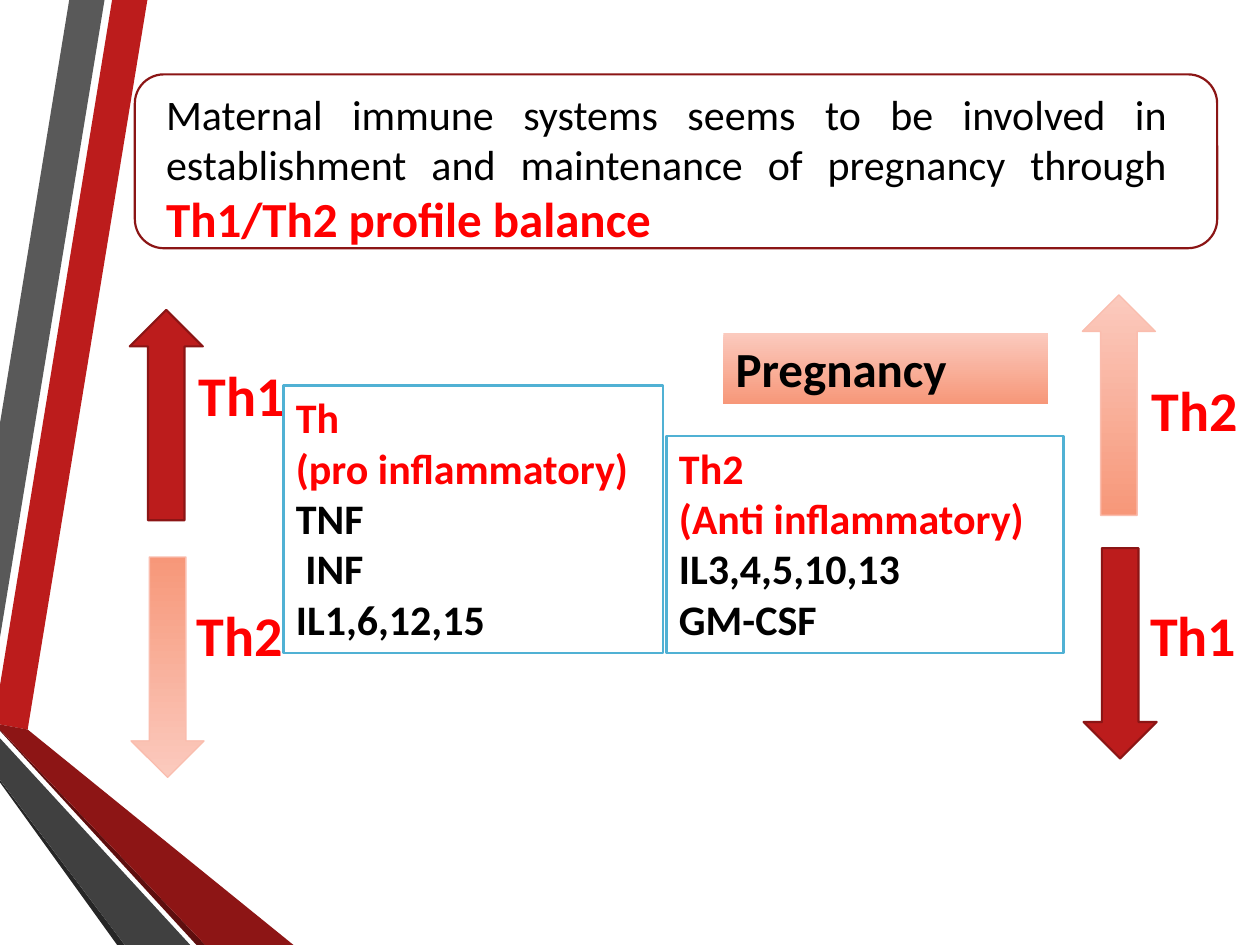
from pptx import Presentation
from pptx.dml.color import RGBColor
from pptx.enum.shapes import MSO_SHAPE
from pptx.enum.text import MSO_ANCHOR, PP_ALIGN
from pptx.util import Inches, Pt

RECT, ROUND, UP = MSO_SHAPE.RECTANGLE, MSO_SHAPE.ROUNDED_RECTANGLE, MSO_SHAPE.UP_ARROW
LEFT, JUSTIFY = PP_ALIGN.LEFT, PP_ALIGN.JUSTIFY
TOP = MSO_ANCHOR.TOP

FONT = "Calibri"
COLORS = {
    "red": "BC1C1C", "dark_red": "8D1515", "deep_red": "5E0E0E", "red_line": "8B1515",
    "gray": "595959", "dark_gray": "404040", "deep_gray": "262626",
    "peach": "FBCABE", "salmon": "F79779", "peach_line": "FABDAE",
    "blue_line": "50B1D4", "white": "FFFFFF", "black": "000000", "accent": "FF0000",
}
PEACH_GRADIENT = ("peach", "salmon")

# Ribbon outlines, from back to front, as inches on the slide
RIBBONS = [
    ("red", [(0, 5.44), (0, 5.75), (0.22, 5.79), (1.17, 0), (0.89, 0)]),
    ("gray", [(0.83, 0), (0.55, 0), (0, 3.36), (0, 5.06)]),
    ("deep_gray", [(0, 6.19), (0, 6.21), (0.93, 7.5), (0.99, 7.5)]),
    ("deep_red", [(0, 5.79), (0, 5.8), (1.56, 7.5), (1.63, 7.5)]),
    ("dark_red", [(0, 5.79), (1.63, 7.5), (2.33, 7.5), (0.22, 5.79), (0, 5.75)]),
    ("dark_gray", [(0, 6.19), (0.99, 7.5), (1.51, 7.5), (0, 5.86)]),
]


def rgb(name):
    return RGBColor.from_string(COLORS[name])


def style_shape(shape, fill=None, line=None, width=1.25):
    """Fill with a colour name, a pair of names for a gradient, or nothing."""
    shape.shadow.inherit = False
    if fill is None:
        shape.fill.background()
    elif isinstance(fill, tuple):
        shape.fill.gradient()
        shape.fill.gradient_angle = 270
        for stop, name, position in zip(shape.fill.gradient_stops, fill, (0, 1)):
            stop.color.rgb = rgb(name)
            stop.position = position
    else:
        shape.fill.solid()
        shape.fill.fore_color.rgb = rgb(fill)
    if line is None:
        shape.line.fill.background()
    else:
        shape.line.color.rgb = rgb(line)
        shape.line.width = Pt(width)


def add_box(page, kind, box, **style):
    shape = page.shapes.add_shape(kind, *map(Inches, box))
    style_shape(shape, **style)
    return shape


def add_span(para, text, size=24, color="black", bold=True):
    span = para.add_run()
    span.text = text
    span.font.name = FONT
    span.font.size = Pt(size)
    span.font.bold = bold
    span.font.color.rgb = rgb(color)


def write_lines(shape, lines, align=LEFT, wrap=True):
    """Fill a shape with paragraphs, each a list of (text, format) spans."""
    frame = shape.text_frame
    frame.word_wrap = wrap
    frame.vertical_anchor = TOP
    for index, spans in enumerate(lines):
        para = frame.add_paragraph() if index else frame.paragraphs[0]
        para.alignment = align
        for text, style in spans:
            add_span(para, text, **style)


def add_ribbons(page):
    for color, points in RIBBONS:
        start, *rest = [(Inches(x), Inches(y)) for x, y in points]
        builder = page.shapes.build_freeform(*start)
        builder.add_line_segments(rest, close=True)
        style_shape(builder.convert_to_shape(), fill=color)


def add_statement(page, box):
    text_box = page.shapes.add_textbox(*map(Inches, box))
    write_lines(text_box, [[
        ("Maternal immune systems seems to be involved in establishment "
         "and maintenance of pregnancy through ", {"bold": False}),
        ("Th1/Th2 profile balance", {"size": 28, "color": "accent"}),
    ]], align=JUSTIFY)


def add_level(page, box, label, label_at, rising):
    """Arrow for a rising or falling response, with its label beside it."""
    if label == "Th1":
        arrow = add_box(page, UP, box, fill="red", line="red_line")
    else:
        arrow = add_box(page, UP, box, fill=PEACH_GRADIENT, line="peach_line", width=0.75)
    arrow.rotation = 0 if rising else 180
    text_box = page.shapes.add_textbox(*map(Inches, (*label_at, 0.89, 0.64)))
    write_lines(text_box, [[(label, {"size": 32, "color": "accent"})]], wrap=False)


def add_cytokines(page, box, heading, items):
    card = add_box(page, RECT, box, fill="white", line="blue_line")
    lines = [[(text, {"color": "accent"})] for text in heading]
    lines += [[(text, {})] for text in items]
    write_lines(card, lines)


def add_pregnancy_tag(page, box):
    tag = add_box(page, RECT, box, fill=PEACH_GRADIENT)
    write_lines(tag, [[("Pregnancy", {"size": 28})]])


def main():
    deck = Presentation()
    deck.slide_width, deck.slide_height = Inches(10), Inches(7.5)
    page = deck.slides.add_slide(deck.slide_layouts[6])

    add_ribbons(page)
    add_statement(page, (1.22, 0.65, 8.14, 1.38))
    add_level(page, (1.03, 2.46, 0.58, 1.67), "Th1", (1.48, 2.81), rising=True)
    add_level(page, (1.04, 4.42, 0.58, 1.75), "Th2", (1.46, 4.72), rising=False)
    add_cytokines(page, (2.25, 3.06, 3.01, 2.12), ["Th", "(pro inflammatory)"],
                  ["TNF", " INF", "IL1,6,12,15"])
    add_cytokines(page, (5.29, 3.46, 3.15, 1.72), ["Th2", "(Anti inflammatory)"],
                  ["IL3,4,5,10,13", "GM-CSF"])
    add_pregnancy_tag(page, (5.74, 2.64, 2.58, 0.57))
    add_level(page, (8.59, 2.34, 0.58, 1.75), "Th2", (9.04, 2.93), rising=True)
    add_level(page, (8.6, 4.35, 0.58, 1.67), "Th1", (9.03, 4.72), rising=False)
    add_box(page, ROUND, (1.07, 0.59, 8.59, 1.38), line="red_line")

    deck.save("out.pptx")


if __name__ == "__main__":
    main()
